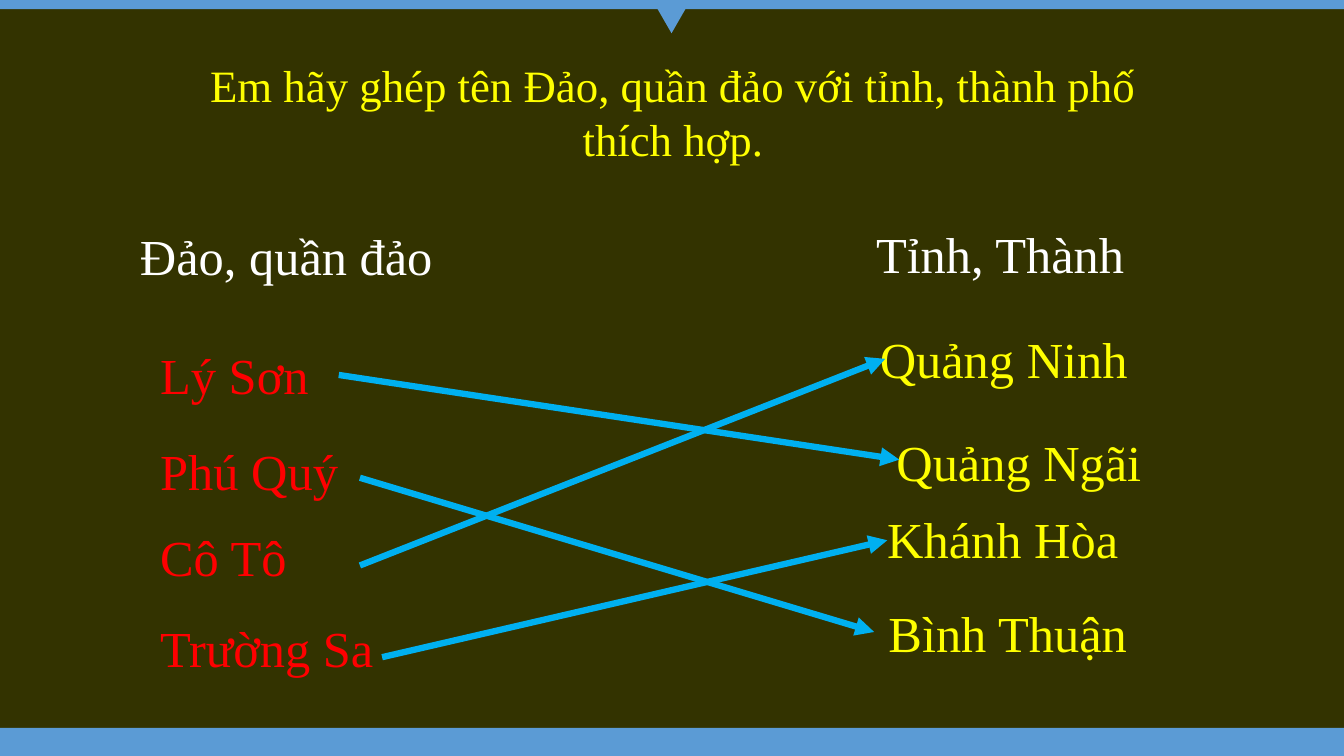
from pptx import Presentation
from pptx.dml.color import RGBColor
from pptx.enum.shapes import MSO_CONNECTOR as Conn, MSO_SHAPE as Shape
from pptx.enum.text import MSO_ANCHOR as Anchor, MSO_AUTO_SIZE as Auto, PP_ALIGN as Align
from pptx.oxml.ns import qn
from pptx.util import Inches, Pt
from lxml.etree import SubElement

OLIVE = RGBColor(0x33, 0x33, 0x00)
BLUE = RGBColor(0x5B, 0x9B, 0xD5)
SKY = RGBColor(0x00, 0xB0, 0xF0)
YELLOW = RGBColor(0xFF, 0xFF, 0x00)
RED = RGBColor(0xFF, 0x00, 0x00)
WHITE = RGBColor(0xFF, 0xFF, 0xFF)

deck = Presentation()
deck.slide_width, deck.slide_height = Inches(13.33), Inches(7.5)
slide = deck.slides.add_slide(deck.slide_layouts[5])
shapes = slide.shapes
slide.background.fill.solid()
slide.background.fill.fore_color.rgb = OLIVE


def write(box, text, size, color, align):
    frame = box.text_frame
    frame.word_wrap = True
    frame.auto_size = Auto.NONE
    frame.vertical_anchor = Anchor.TOP
    para = frame.paragraphs[0]
    para.text = text
    para.alignment = align
    para.font.name = "Times New Roman"
    para.font.size = Pt(size)
    para.font.color.rgb = color


# Bars and top pointer
for kind, x, y, w, h, turn in [
    (Shape.RECTANGLE, 0, 7.22, 13.33, 0.28, 0),
    (Shape.RECTANGLE, 0, 0, 13.33, 0.09, 0),
    (Shape.ISOSCELES_TRIANGLE, 6.47, 0, 0.38, 0.33, 180),
]:
    bar = shapes.add_shape(kind, Inches(x), Inches(y), Inches(w), Inches(h))
    bar.rotation = turn
    bar.shadow.inherit = False
    bar.fill.solid()
    bar.fill.fore_color.rgb = BLUE
    bar.line.fill.background()

# Title
title = shapes.title
title.left, title.top = Inches(1.61), Inches(0.52)
title.width, title.height = Inches(10.13), Inches(1.18)
write(title, "Em hãy ghép tên Đảo, quần đảo với tỉnh, thành phố thích hợp.",
      32, YELLOW, Align.CENTER)

# Column heads, islands and provinces
for text, x, y, w, color, align in [
    ("Đảo, quần đảo", 1.29, 2.18, 3.27, WHITE, Align.LEFT),
    ("Tỉnh, Thành", 8.59, 2.16, 3.08, WHITE, Align.LEFT),
    ("Lý Sơn", 1.49, 3.36, 2.55, RED, Align.LEFT),
    ("Phú Quý", 1.49, 4.32, 2.55, RED, Align.LEFT),
    ("Cô Tô", 1.49, 5.17, 2.55, RED, Align.LEFT),
    ("Trường Sa", 1.49, 6.07, 2.55, RED, Align.LEFT),
    ("Quảng Ninh", 8.59, 3.21, 2.73, YELLOW, Align.CENTER),
    ("Quảng Ngãi", 8.78, 4.23, 2.65, YELLOW, Align.CENTER),
    ("Khánh Hòa", 8.67, 4.99, 2.55, YELLOW, Align.CENTER),
    ("Bình Thuận", 8.67, 5.92, 2.65, YELLOW, Align.CENTER),
]:
    box = shapes.add_textbox(Inches(x), Inches(y), Inches(w), Inches(0.71))
    write(box, text, 36, color, align)

# Arrows from island to province
for ends in [
    (3.36, 3.72, 8.92, 4.56),
    (3.57, 4.74, 8.67, 6.27),
    (3.57, 5.61, 8.78, 3.56),
    (3.79, 6.52, 8.8, 5.36),
]:
    arrow = shapes.add_connector(Conn.STRAIGHT, *[Inches(n) for n in ends])
    arrow.line.color.rgb = SKY
    arrow.line.width = Pt(4.5)
    props = arrow._element.spPr
    SubElement(props.find(qn("a:ln")), qn("a:tailEnd"), type="triangle")
    SubElement(props, qn("a:effectLst"))

deck.save("out.pptx")
